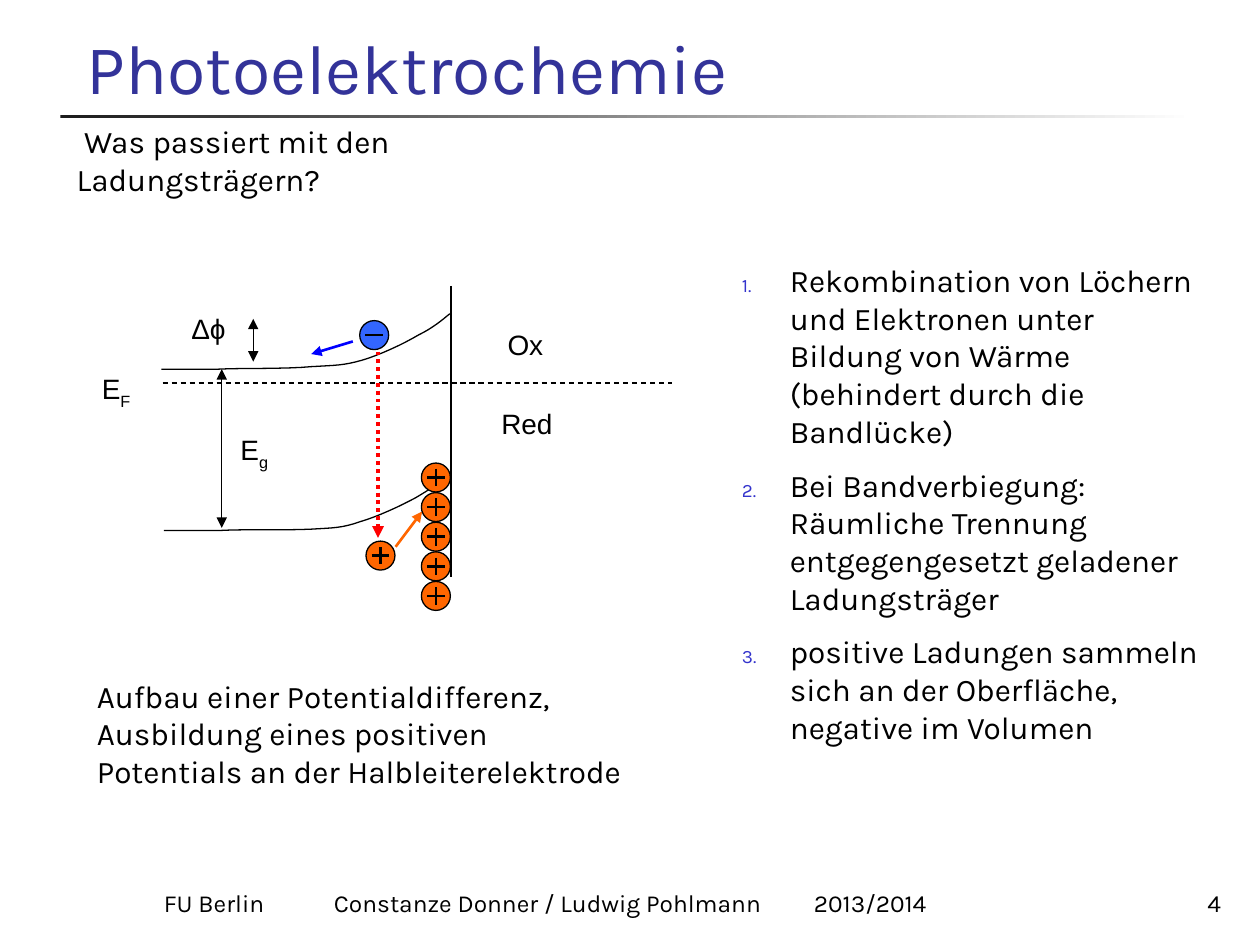
"""Build the Photoelektrochemie slide with its band-bending diagram."""
from lxml import etree
from pptx import Presentation
from pptx.dml.color import RGBColor
from pptx.enum.dml import MSO_LINE
from pptx.enum.shapes import MSO_CONNECTOR, MSO_SHAPE
from pptx.enum.text import MSO_ANCHOR, PP_ALIGN
from pptx.oxml.ns import qn
from pptx.util import Inches, Pt

TOP, MIDDLE, BOTTOM = MSO_ANCHOR.TOP, MSO_ANCHOR.MIDDLE, MSO_ANCHOR.BOTTOM
LEFT, RIGHT = PP_ALIGN.LEFT, PP_ALIGN.RIGHT
DASH, DOT = MSO_LINE.DASH, MSO_LINE.ROUND_DOT
STRAIGHT = MSO_CONNECTOR.STRAIGHT
RECTANGLE, OVAL = MSO_SHAPE.RECTANGLE, MSO_SHAPE.OVAL

COLORS = {
    "black": "000000", "white": "FFFFFF", "rule": "1C1C1C", "title": "333399",
    "number": "3333CC", "hole": "FF6600", "electron": "3366FF",
    "drift": "0000FF", "recombination": "FF0000",
}
TITLE = "Photoelektrochemie"
QUESTION = " Was passiert mit den Ladungsträgern?"
PROCESSES = [
    "Rekombination von Löchern und Elektronen unter Bildung von Wärme "
    "(behindert durch die Bandlücke)",
    "Bei Bandverbiegung: Räumliche Trennung entgegengesetzt geladener Ladungsträger",
    "positive Ladungen sammeln sich an der Oberfläche, negative im Volumen",
]
RESULT = ("Aufbau einer Potentialdifferenz, Ausbildung eines positiven "
          "Potentials an der Halbleiterelektrode")
FOOTER = ["FU Berlin", "Constanze Donner / Ludwig Pohlmann", "2013/2014"]
FOOTER_TABS = [1.35, 5.16]
PAGE_NUMBER = "4"

LABELS = [
    ("Ox", "", (3.93, 2.55, 0.57, 0.39)),
    ("Red", "", (3.88, 3.18, 0.72, 0.39)),
    ("E", "F", (0.71, 2.9, 0.49, 0.39)),
    ("E", "g", (1.81, 3.38, 0.49, 0.39)),
    ("Δϕ", "", (1.42, 2.42, 0.51, 0.41)),
]
BANDS = [
    [(1.28, 2.93), (1.41, 2.93), (1.54, 2.93), (1.73, 2.93), (1.93, 2.92),
     (2.28, 2.93), (2.47, 2.91), (2.66, 2.9), (2.73, 2.9), (2.87, 2.86),
     (3.01, 2.82), (3.2, 2.73), (3.32, 2.66), (3.44, 2.6), (3.51, 2.54), (3.57, 2.49)],
    [(1.3, 4.21), (1.43, 4.21), (1.55, 4.21), (1.75, 4.21), (1.94, 4.2),
     (2.28, 4.21), (2.47, 4.2), (2.65, 4.19), (2.72, 4.19), (2.86, 4.14),
     (3, 4.1), (3.19, 4.01), (3.3, 3.95), (3.42, 3.88), (3.49, 3.83), (3.55, 3.77)],
]
BOTH, END = ("headEnd", "tailEnd"), ("tailEnd",)
LINES = [
    ((1.29, 3.04), (5.33, 3.04), {"dash": DASH}),
    ((3.58, 2.27), (3.58, 4.58), {}),
    ((1.76, 2.93), (1.76, 4.19), {"arrows": BOTH}),
    ((2.01, 2.53), (2.01, 2.87), {"arrows": BOTH}),
    ((2.8, 2.71), (2.47, 2.81), {"color": "drift", "width": 1.5, "arrows": END}),
    ((3.14, 4.34), (3.35, 4.06), {"color": "hole", "width": 1.5, "arrows": END}),
    ((3, 2.79), (3, 4.27), {"color": "recombination", "width": 2.25,
                            "dash": DOT, "arrows": END}),
]
DIAMETER, ARM = 0.23, 0.07
ELECTRON, FREE_HOLE = (2.97, 2.66), (3.02, 4.41)
SURFACE_X, SURFACE_TOP, SURFACE_BOTTOM, SURFACE_COUNT = 3.46, 3.79, 4.73, 5


def rgb(name):
    return RGBColor.from_string(COLORS[name])


def add_text(page, text, at, size=18, font="Karla", color="black", anchor=TOP,
             align=LEFT, before=0, fill=None, subscript="", wrap=True):
    box = page.shapes.add_textbox(*map(Inches, at))
    if fill:
        box.fill.solid()
        box.fill.fore_color.rgb = rgb(fill)
    frame = box.text_frame
    frame.word_wrap, frame.vertical_anchor = wrap, anchor
    for index, line in enumerate([text] if isinstance(text, str) else text):
        para = frame.paragraphs[0] if index == 0 else frame.add_paragraph()
        para.alignment = align
        if before:
            para.space_before = Pt(before)
        for part in filter(None, (line, subscript)):
            span = para.add_run()
            span.text = part
            span.font.size, span.font.name = Pt(size), font
            span.font.color.rgb = rgb(color)
            if part == subscript:
                span.font._element.set("baseline", "-30000")
    return box


def add_line(shapes, start, end, color="black", width=0.75, dash=None, arrows=()):
    line = shapes.add_connector(STRAIGHT, *map(Inches, start + end))
    line.line.color.rgb = rgb(color)
    line.line.width = Pt(width)
    if dash:
        line.line.dash_style = dash
    for tag in arrows:
        etree.SubElement(line.get_or_add_ln(), qn("a:" + tag), type="triangle")
    etree.SubElement(line._element.spPr, qn("a:effectLst"))


def add_band(page, points):
    points = [(Inches(x), Inches(y)) for x, y in points]
    curve = []
    for first in range(0, len(points) - 1, 3):
        a, b, c, d = points[first:first + 4]
        for step in range(1, 9):
            t = step / 8
            curve.append(tuple(
                (1 - t) ** 3 * a[i] + 3 * t * (1 - t) ** 2 * b[i]
                + 3 * t * t * (1 - t) * c[i] + t ** 3 * d[i] for i in (0, 1)))
    builder = page.shapes.build_freeform(*points[0])
    builder.add_line_segments(curve, close=False)
    band = builder.convert_to_shape()
    band.shadow.inherit = False
    band.fill.background()
    band.line.color.rgb = rgb("black")
    band.line.width = Pt(0.75)


def add_charge(page, center, color, positive):
    x, y = center
    shapes = page.shapes.add_group_shape().shapes
    circle = shapes.add_shape(OVAL, Inches(x - DIAMETER / 2), Inches(y - DIAMETER / 2),
                              Inches(DIAMETER), Inches(DIAMETER))
    circle.shadow.inherit = False
    circle.fill.solid()
    circle.fill.fore_color.rgb = rgb(color)
    circle.line.color.rgb = rgb("black")
    circle.line.width = Pt(0.75)
    if positive:
        add_line(shapes, (x, y - ARM), (x, y + ARM), width=1.5)
    add_line(shapes, (x - ARM, y), (x + ARM, y), width=1.5)


def add_rule(page):
    rule = page.shapes.add_shape(RECTANGLE, *map(Inches, (0.48, 0.91, 9, 0.03)))
    rule.shadow.inherit = False
    rule.line.fill.background()
    rule.fill.gradient()
    rule.fill.gradient_angle = 0
    for stop, position, name in zip(rule.fill.gradient_stops, (0, 1), ("rule", "white")):
        stop.position = position
        stop.color.rgb = rgb(name)


def number_paragraphs(box):
    for para in box.text_frame.paragraphs:
        props = para._p.get_or_add_pPr()
        props.set("marL", str(Inches(0.38)))
        props.set("indent", str(-Inches(0.38)))
        tint = etree.SubElement(props, qn("a:buClr"))
        etree.SubElement(tint, qn("a:srgbClr"), val=COLORS["number"])
        etree.SubElement(props, qn("a:buSzPct"), val="60000")
        etree.SubElement(props, qn("a:buAutoNum"), type="arabicPeriod")


def add_footer(page):
    box = add_text(page, "\t".join(FOOTER), (0.35, 6.83, 7.95, 0.5), size=14, anchor=BOTTOM)
    box.text_frame.margin_left = Inches(0.95)
    props = box.text_frame.paragraphs[0]._p.get_or_add_pPr()
    tabs = etree.SubElement(props, qn("a:tabLst"))
    for position in FOOTER_TABS:
        etree.SubElement(tabs, qn("a:tab"), pos=str(Inches(position)), algn="l")
    add_text(page, PAGE_NUMBER, (8.47, 6.83, 1.32, 0.5), size=14, anchor=BOTTOM, align=RIGHT)


def main():
    deck = Presentation()
    deck.slide_width, deck.slide_height = Inches(10), Inches(7.5)
    page = deck.slides.add_slide(deck.slide_layouts[6])
    add_rule(page)
    add_footer(page)
    add_text(page, TITLE, (0.59, 0.23, 9.19, 0.68), size=40, color="title", anchor=BOTTOM)
    add_text(page, QUESTION, (0.51, 1.07, 4.4, 0.4), anchor=MIDDLE)
    number_paragraphs(add_text(page, PROCESSES, (5.79, 2.02, 3.86, 4.19), before=9))
    for points in BANDS:
        add_band(page, points)
    for text, subscript, at in LABELS:
        add_text(page, text, at, size=16, font="Arial", fill="white",
                 subscript=subscript, wrap=False)
    for start, end, style in LINES:
        add_line(page.shapes, start, end, **style)
    add_charge(page, FREE_HOLE, "hole", True)
    add_charge(page, ELECTRON, "electron", False)
    add_text(page, RESULT, (0.67, 5.32, 4.49, 1.01), before=9)
    pitch = (SURFACE_BOTTOM - SURFACE_TOP) / (SURFACE_COUNT - 1)
    for index in range(SURFACE_COUNT):
        add_charge(page, (SURFACE_X, SURFACE_TOP + index * pitch), "hole", True)
    deck.save("out.pptx")


if __name__ == "__main__":
    main()
